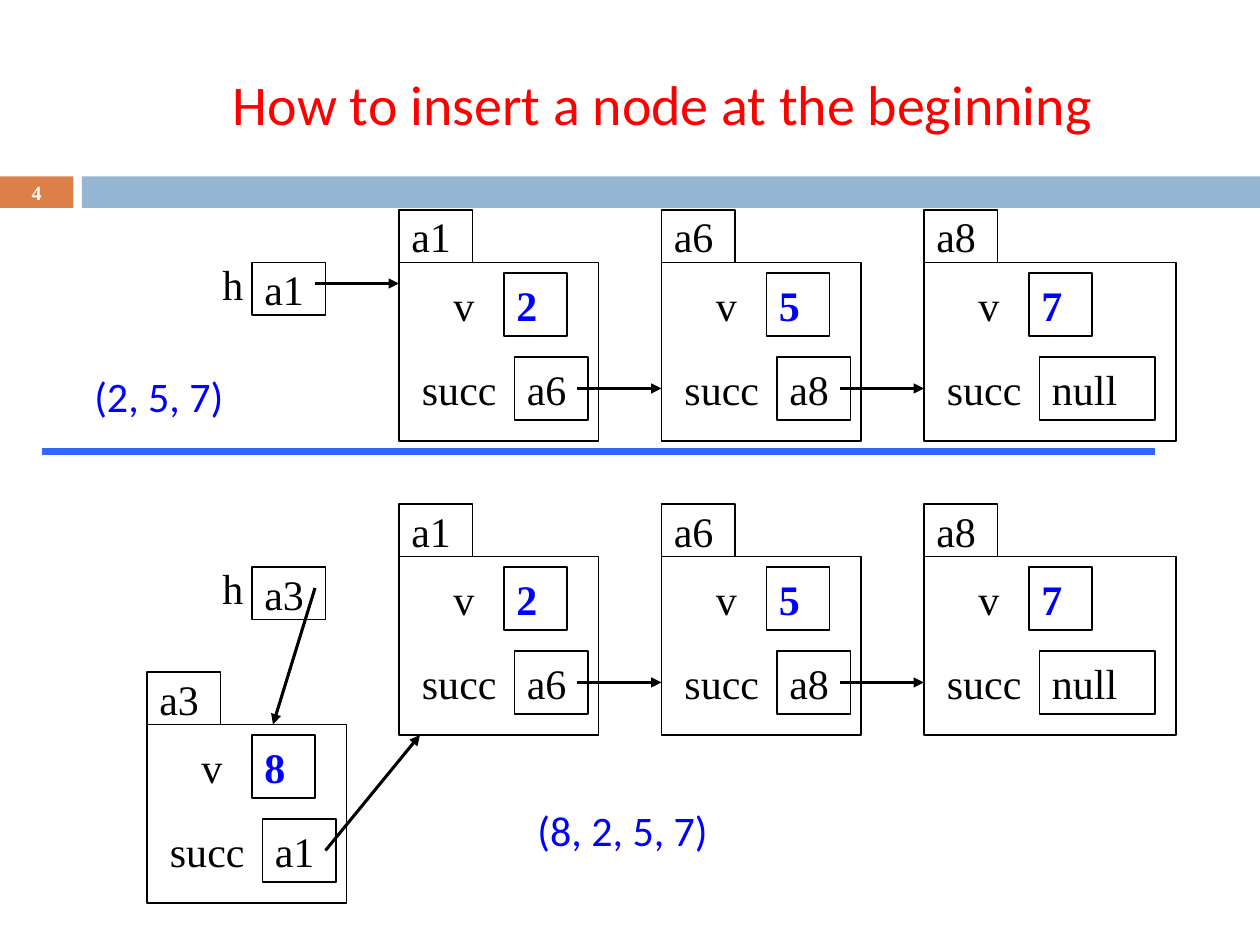
from dataclasses import dataclass

from lxml import etree
from pptx import Presentation
from pptx import util as u
from pptx.dml.color import RGBColor
from pptx.enum import shapes, text
from pptx.oxml.ns import qn


@dataclass(frozen=True)
class Theme:
    serif: str = "Times New Roman"
    sans: str = "Calibri"
    ink: str = "000000"
    value: str = "0000FF"
    title: str = "FF0000"
    divider: str = "3366FF"
    badge: str = "DD8047"
    band: str = "94B6D2"
    badge_text: str = "FFFFFF"
    title_size: float = 32
    body_size: float = 24
    badge_size: float = 11.4
    outline: float = 0.75
    arrow: float = 1.75
    rule: float = 3.75


THEME = Theme()
SLIDE_WIDTH, SLIDE_HEIGHT = u.Inches(10), u.Inches(7.5)
COLUMNS, ROWS = 120, 90
FIRST_NODE, NODE_STEP = 38, 25
ENTRIES = [("a1", "2", "a6"), ("a6", "5", "a8"), ("a8", "7", "null")]


def across(columns):
    return round(SLIDE_WIDTH * columns / COLUMNS)


def down(rows):
    return round(SLIDE_HEIGHT * rows / ROWS)


def frame(column, row, width, height):
    return across(column), down(row), across(width), down(height)


def write(holder, words, color=THEME.ink, size=THEME.body_size, font=THEME.serif,
          bold=False, wrap=True, middle=False, centered=False):
    body = holder.text_frame
    body.word_wrap = wrap
    body.vertical_anchor = text.MSO_ANCHOR.MIDDLE if middle else text.MSO_ANCHOR.TOP
    paragraph = body.paragraphs[0]
    paragraph.alignment = text.PP_ALIGN.CENTER if centered else text.PP_ALIGN.LEFT
    run = paragraph.add_run()
    run.text = words
    run.font.name = font
    run.font.size = u.Pt(size)
    run.font.bold = bold
    run.font.color.rgb = RGBColor.from_string(color)


def label(slide, words, area, **style):
    write(slide.shapes.add_textbox(*frame(*area)), words, **style)


def rectangle(slide, area):
    box = slide.shapes.add_shape(shapes.MSO_SHAPE.RECTANGLE, *frame(*area))
    box.shadow.inherit = False
    return box


def bar(slide, area, color):
    box = rectangle(slide, area)
    box.fill.solid()
    box.fill.fore_color.rgb = RGBColor.from_string(color)
    box.line.fill.background()


def cell(slide, area, words=None, **style):
    box = rectangle(slide, area)
    box.fill.background()
    box.line.color.rgb = RGBColor.from_string(THEME.ink)
    box.line.width = u.Pt(THEME.outline)
    if words:
        write(box, words, **style)


def line(slide, start, end, color=THEME.ink, width=THEME.arrow, pointed=True):
    stroke = slide.shapes.add_connector(
        shapes.MSO_CONNECTOR.STRAIGHT,
        across(start[0]), down(start[1]), across(end[0]), down(end[1]))
    stroke.line.color.rgb = RGBColor.from_string(color)
    stroke.line.width = u.Pt(width)
    properties = stroke.element.spPr
    if pointed:
        etree.SubElement(properties.find(qn("a:ln")), qn("a:tailEnd"), type="triangle")
    etree.SubElement(properties, qn("a:effectLst"))


def node(slide, column, row, address, value, successor):
    body_width, link_width = (24, 11) if successor == "null" else (19, 7)
    cell(slide, (column + 10, row + 6, 6, 6), value, color=THEME.value, bold=True)
    cell(slide, (column, row, 7, 5), address, middle=True)
    cell(slide, (column + 11, row + 14, link_width, 6), successor)
    label(slide, "v", (column + 4, row + 6, 5, 6))
    label(slide, "succ", (column + 1, row + 14, 10, 6))
    cell(slide, (column, row + 5, body_width, 17))


def linked_list(slide, row):
    for index, entry in enumerate(ENTRIES):
        column = FIRST_NODE + index * NODE_STEP
        node(slide, column, row, *entry)
        if index < len(ENTRIES) - 1:
            line(slide, (column + 17, row + 17), (column + NODE_STEP, row + 17))


def head(slide, row, address, target):
    label(slide, "h", (20, row, 4.4, 6), wrap=False)
    cell(slide, (24, row + 1, 7, 5), address, middle=True)
    line(slide, (30, row + 3), target)


def result(slide, words, area):
    label(slide, words, area, color=THEME.value, font=THEME.sans, wrap=False)


def header(slide):
    bar(slide, (0, 16.8, 7, 3), THEME.badge)
    bar(slide, (7.8, 16.8, 112.2, 3), THEME.band)
    label(slide, "4", (0, 16.7, 7, 3.2), color=THEME.badge_text,
          size=THEME.badge_size, bold=True, middle=True, centered=True)
    label(slide, "How to insert a node at the beginning", (21, 6, 88, 7.7),
          color=THEME.title, size=THEME.title_size, font=THEME.sans)


def before_insertion(slide):
    head(slide, 24, "a1", (FIRST_NODE, 27))
    linked_list(slide, 20)
    result(slide, "(2, 5, 7)", (7.8, 34.7, 15.2, 6))


def after_insertion(slide):
    head(slide, 53, "a3", (26, 69))
    linked_list(slide, 48)
    node(slide, 14, 64, "a3", "8", "a1")
    line(slide, (31, 81), (40, 70))
    result(slide, "(8, 2, 5, 7)", (50, 76, 19.6, 6))


def main():
    deck = Presentation()
    deck.slide_width, deck.slide_height = SLIDE_WIDTH, SLIDE_HEIGHT
    slide = deck.slides.add_slide(deck.slide_layouts[6])
    header(slide)
    before_insertion(slide)
    line(slide, (4, 43), (110, 43), THEME.divider, THEME.rule, pointed=False)
    after_insertion(slide)
    deck.save("out.pptx")


if __name__ == "__main__":
    main()
